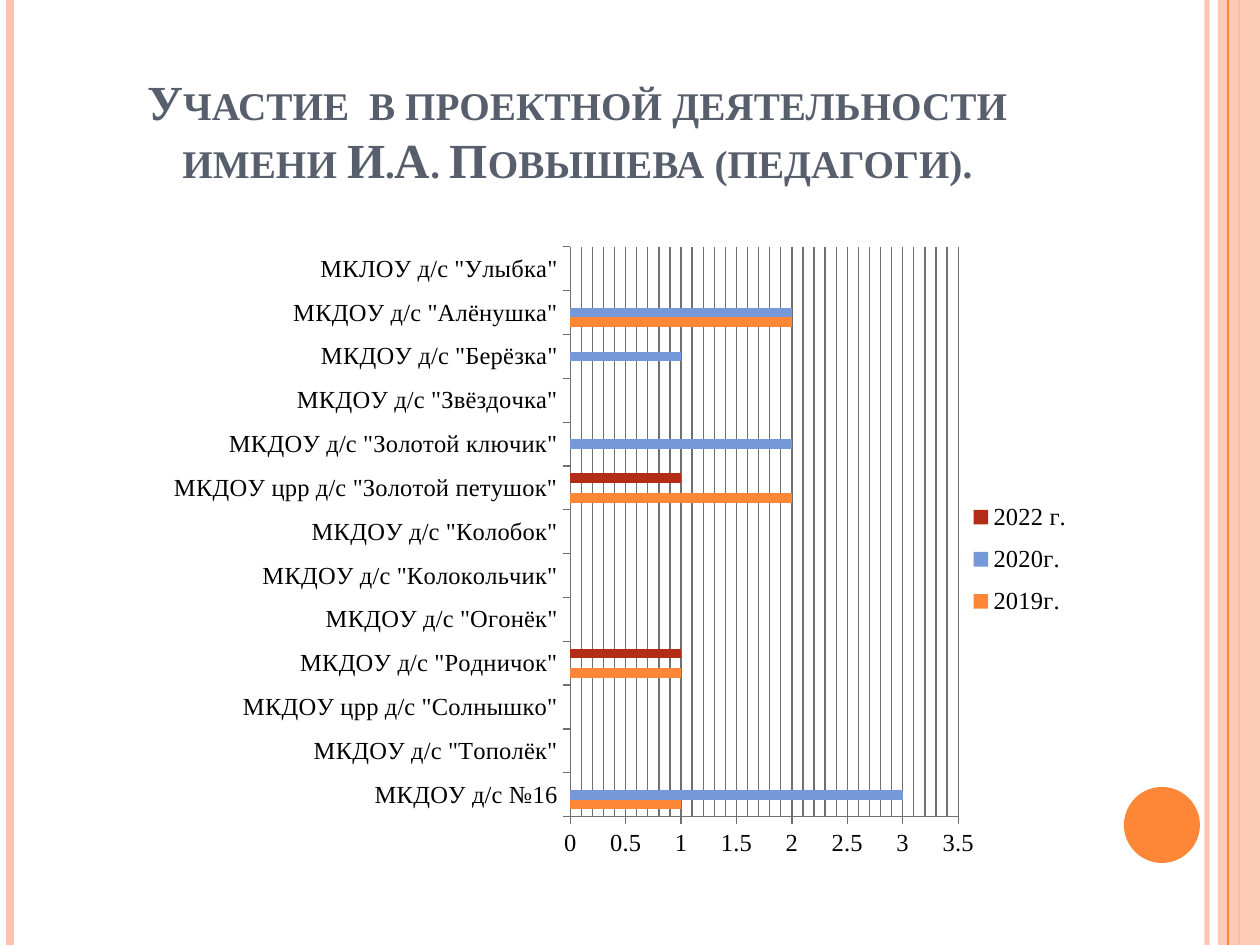
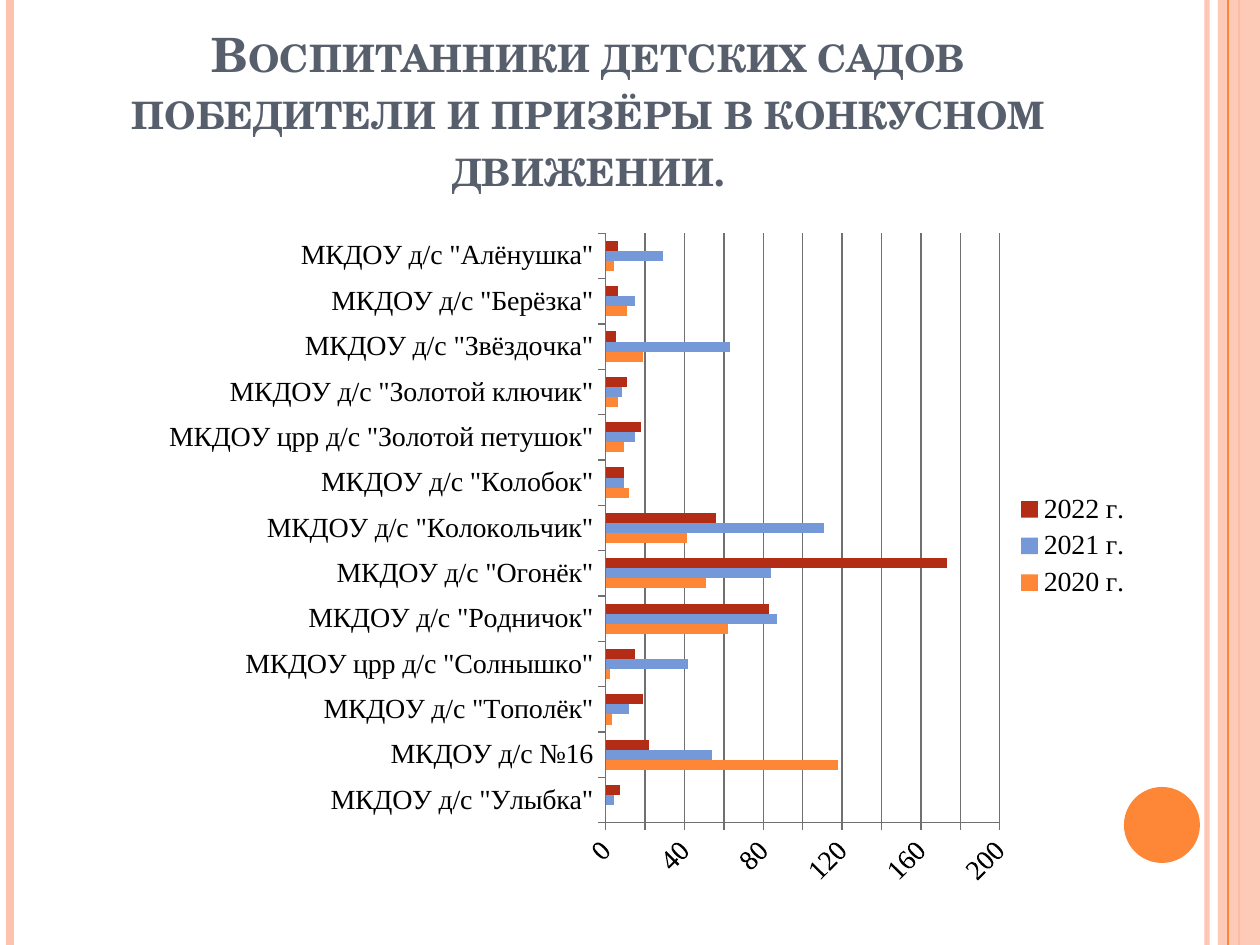
import copy

import pptx
import pptx.chart.data
import pptx.dml.color
import pptx.enum.chart
import pptx.enum.shapes
import pptx.enum.text
import pptx.oxml
import pptx.oxml.ns
import pptx.util

COLORS = {
    "peach": "FEC3AE",
    "orange": "FE8637",
    "blue": "7598D9",
    "red": "B32C16",
    "title": "575F6D",
    "text": "000000",
    "grid": "707070",
}
SERIES_COLORS = ("orange", "blue", "red")
CHART_FONT = "Times New Roman"
WIDTH, HEIGHT = 1260, 945
EMU_PER_PX = 914400 / 126
CHART_NS = pptx.oxml.ns.nsdecls("c")

KINDERGARTENS = [
    'МКДОУ д/с №16',
    'МКДОУ д/с "Тополёк"',
    'МКДОУ црр д/с "Солнышко"',
    'МКДОУ д/с "Родничок"',
    'МКДОУ д/с "Огонёк"',
    'МКДОУ д/с "Колокольчик"',
    'МКДОУ д/с "Колобок"',
    'МКДОУ црр д/с "Золотой петушок"',
    'МКДОУ д/с "Золотой ключик"',
    'МКДОУ д/с "Звёздочка"',
    'МКДОУ д/с "Берёзка"',
    'МКДОУ д/с "Алёнушка"',
]

SLIDES = [
    {
        "title": "Участие  в проектной деятельности\vимени И.А. Повышева (педагоги).",
        "title_box": (63, 38, 1029, 157),
        "title_font": ("Times New Roman", 28),
        "chart_box": (63, 220, 1029, 672),
        "chart_size": 14,
        "plot": (0.493, 0.04, 0.377, 0.848),
        "legend": (0.875, 0.4, 0.11, 0.21),
        "scale": (3.5, 0.5, 0.1),
        "label_angle": 0,
        "categories": KINDERGARTENS + ['МКЛОУ д/с "Улыбка"'],
        "series": {
            "2019г.": [1, None, None, 1, None, None, None, 2, None, None, None, 2, None],
            "2020г.": [3, None, None, None, None, None, None, None, 2, None, 1, 2, None],
            "2022 г.": [None, None, None, 1, None, None, None, 1] + [None] * 5,
        },
    },
    {
        "title": "Воспитанники детских садов победители и призёры в конкусном движении.",
        "title_box": (74, 45, 1029, 157),
        "title_font": ("TeX Gyre Schola", 27),
        "chart_box": (115, 214, 1029, 672),
        "chart_size": 16,
        "plot": (0.477, 0.029, 0.383, 0.888),
        "legend": None,
        "scale": (200, 20, None),
        "label_angle": -45,
        "categories": ['МКДОУ д/с "Улыбка"'] + KINDERGARTENS,
        "series": {
            "2020 г.": [0, 118, 3, 2, 62, 51, 41, 12, 9, 6, 19, 11, 4],
            "2021 г.": [4, 54, 12, 42, 87, 84, 111, 9, 15, 8, 63, 15, 29],
            "2022 г.": [7, 22, 19, 15, 83, 173, 56, 9, 18, 11, 5, 6, 6],
        },
    },
]


def px(length):
    return pptx.util.Emu(round(length * EMU_PER_PX))


def rgb(name):
    return pptx.dml.color.RGBColor.from_string(COLORS[name])


def set_opacity(element, percent):
    for color in element.xpath(".//p:spPr//a:srgbClr"):
        color.append(pptx.oxml.parse_xml(
            f'<a:alpha {pptx.oxml.ns.nsdecls("a")} val="{percent * 1000}"/>'))


def add_stripe(slide, x, color, weight, opacity=100):
    stripe = slide.shapes.add_connector(
        pptx.enum.shapes.MSO_CONNECTOR.STRAIGHT, px(x), 0, px(x), px(HEIGHT))
    stripe.line.color.rgb = rgb(color)
    stripe.line.width = pptx.util.Pt(weight)
    stripe.element.spPr.append(pptx.oxml.parse_xml(
        f'<a:effectLst {pptx.oxml.ns.nsdecls("a")}/>'))
    if opacity < 100:
        set_opacity(stripe.element, opacity)


def add_filled(slide, preset, box, color):
    filled = slide.shapes.add_shape(preset, *map(px, box))
    filled.shadow.inherit = False
    filled.fill.solid()
    filled.fill.fore_color.rgb = rgb(color)
    filled.line.fill.background()
    return filled


def add_decoration(slide):
    presets = pptx.enum.shapes.MSO_SHAPE
    add_stripe(slide, 1207, "peach", 3, 93)
    add_stripe(slide, 10, "peach", 4.5)
    add_stripe(slide, 1239, "orange", 1.5)
    band = add_filled(slide, presets.RECTANGLE, (1218, 0, WIDTH - 1218, HEIGHT), "peach")
    set_opacity(band.element, 87)
    add_stripe(slide, 1228, "orange", 0.75)
    add_filled(slide, presets.OVAL, (1124, 787, 76, 76), "orange")


def add_title(slide, box, text, font_name, size):
    frame = slide.shapes.add_textbox(*map(px, box)).text_frame
    frame.word_wrap = True
    frame.vertical_anchor = pptx.enum.text.MSO_ANCHOR.BOTTOM
    heading = frame.paragraphs[0]
    heading.text = text
    heading.alignment = pptx.enum.text.PP_ALIGN.CENTER
    for run in heading.runs:
        run.font.name = font_name
        run.font.size = pptx.util.Pt(size)
        run.font.bold = True
        run.font.color.rgb = rgb("title")
        run.font._element.set("cap", "small")


def layout_xml(box, target=""):
    x, y, w, h = box
    return pptx.oxml.parse_xml(
        f'<c:layout {CHART_NS}><c:manualLayout>{target}'
        '<c:xMode val="edge"/><c:yMode val="edge"/>'
        f'<c:x val="{x}"/><c:y val="{y}"/><c:w val="{w}"/><c:h val="{h}"/>'
        '</c:manualLayout></c:layout>')


def place_chart_parts(chart, plot, legend):
    plot_area = chart._chartSpace.xpath("c:chart/c:plotArea")[0]
    for automatic in plot_area.xpath("c:layout"):
        plot_area.remove(automatic)
    plot_area.insert(0, layout_xml(plot, '<c:layoutTarget val="inner"/>'))
    if legend:
        chart._chartSpace.xpath(".//c:legendPos")[0].addnext(layout_xml(legend))


def style_font(font, size):
    font.name = CHART_FONT
    font.size = pptx.util.Pt(size)
    font.color.rgb = rgb("text")


def style_line(line):
    line.color.rgb = rgb("grid")
    line.width = pptx.util.Pt(0.75)


def style_axes(chart, scale, size, label_angle):
    tick_marks = pptx.enum.chart.XL_TICK_MARK
    for axis in (chart.category_axis, chart.value_axis):
        axis.major_tick_mark = tick_marks.OUTSIDE
        axis.minor_tick_mark = tick_marks.NONE
        style_line(axis.format.line)
        style_font(axis.tick_labels.font, size)
    values = chart.value_axis
    values.minimum_scale = 0
    values.maximum_scale, values.major_unit, minor_unit = scale
    values.has_major_gridlines = True
    style_line(values.major_gridlines.format.line)
    if minor_unit:
        values.minor_unit = minor_unit
        values.has_minor_gridlines = True
        grid_style = values._element.xpath("c:majorGridlines/c:spPr")[0]
        values._element.xpath("c:minorGridlines")[0].append(copy.deepcopy(grid_style))
    if label_angle:
        label_body = values._element.xpath("c:txPr/a:bodyPr")[0]
        label_body.set("rot", str(label_angle * 60000))
        label_body.set("vert", "horz")


def add_bar_chart(slide, content):
    data = pptx.chart.data.CategoryChartData()
    data.categories = content["categories"]
    for year, counts in content["series"].items():
        data.add_series(year, counts)
    chart = slide.shapes.add_chart(
        pptx.enum.chart.XL_CHART_TYPE.BAR_CLUSTERED,
        *map(px, content["chart_box"]), data).chart
    size = content["chart_size"]
    style_font(chart.font, size)
    chart.has_title = False
    chart.has_legend = True
    chart.legend.position = pptx.enum.chart.XL_LEGEND_POSITION.RIGHT
    chart.legend.include_in_layout = False
    style_font(chart.legend.font, size)
    bars = chart.plots[0]
    bars.gap_width = 150
    bars.vary_by_categories = False
    for year_bars, color in zip(bars.series, SERIES_COLORS):
        year_bars.format.fill.solid()
        year_bars.format.fill.fore_color.rgb = rgb(color)
    style_axes(chart, content["scale"], size, content["label_angle"])
    place_chart_parts(chart, content["plot"], content["legend"])


def add_chart_slide(deck, content):
    slide = deck.slides.add_slide(deck.slide_layouts[6])
    add_decoration(slide)
    add_title(slide, content["title_box"], content["title"], *content["title_font"])
    add_bar_chart(slide, content)


def main():
    deck = pptx.Presentation()
    deck.slide_width, deck.slide_height = px(WIDTH), px(HEIGHT)
    for content in SLIDES:
        add_chart_slide(deck, content)
    deck.save("out.pptx")


if __name__ == "__main__":
    main()
